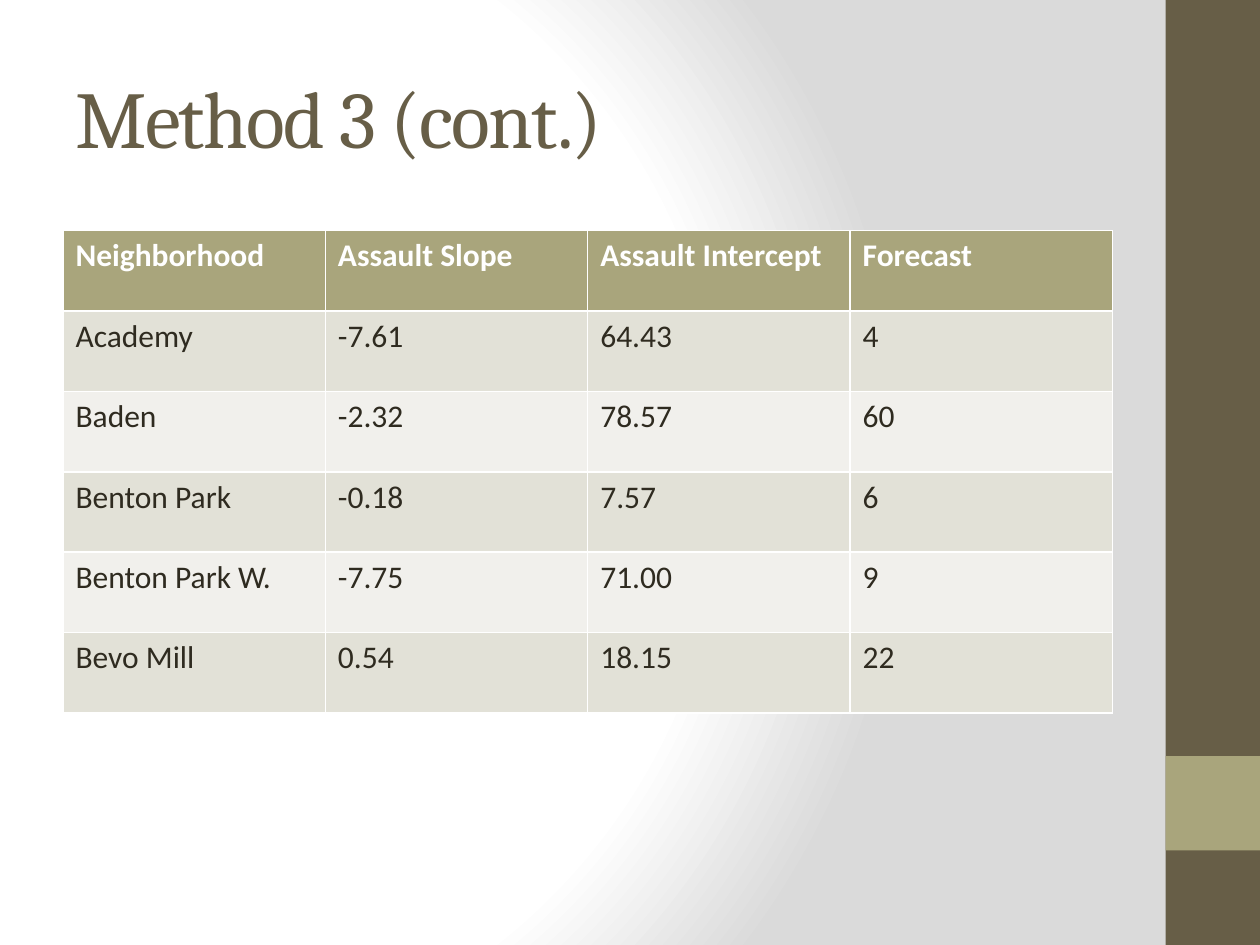
from pptx import Presentation
from pptx.dml.color import RGBColor
from pptx.enum.shapes import MSO_SHAPE
from pptx.enum.text import MSO_ANCHOR, MSO_AUTO_SIZE, PP_ALIGN
from pptx.oxml import parse_xml
from pptx.util import Inches, Pt

RECT = MSO_SHAPE.RECTANGLE
MIDDLE = MSO_ANCHOR.MIDDLE
LEFT = PP_ALIGN.LEFT
NO_FIT = MSO_AUTO_SIZE.NONE
TITLE_ONLY = 5
NS_A = "http://schemas.openxmlformats.org/drawingml/2006/main"

COLORS = {
    "white": "FFFFFF",
    "gray": "DADADA",
    "brown": "675E47",
    "olive": "A9A57C",
    "band_dark": "E2E1D7",
    "band_light": "F1F0EC",
    "text": "2F2B20",
}
FORMATS = {
    "title": {"name": "Cambria", "size": Pt(46), "bold": False},
    "header": {"name": "Calibri", "size": Pt(18), "bold": True},
    "body": {"name": "Calibri", "size": Pt(18), "bold": False},
}
ROWS = [
    ("Neighborhood", "Assault Slope", "Assault Intercept", "Forecast"),
    ("Academy", "-7.61", "64.43", "4"),
    ("Baden", "-2.32", "78.57", "60"),
    ("Benton Park", "-0.18", "7.57", "6"),
    ("Benton Park W.", "-7.75", "71.00", "9"),
    ("Bevo Mill", "0.54", "18.15", "22"),
]


def rgb(color):
    return RGBColor.from_string(COLORS[color])


class SlideBuilder:
    def __init__(self, slide):
        self.s = slide

    def background(self, stops, focus):
        """Circular gradient; focus holds the l, t, r, b percentages."""
        self.s.background.fill.solid()
        bg_pr = self.s.element.cSld.bg.bgPr
        gs = "".join(
            f'<a:gs pos="{pos * 1000}"><a:srgbClr val="{COLORS[color]}"/></a:gs>'
            for pos, color in stops)
        rect = " ".join(f'{side}="{pct * 1000}"' for side, pct in zip("ltrb", focus))
        bg_pr.remove(bg_pr[0])
        bg_pr.insert(0, parse_xml(
            f'<a:gradFill xmlns:a="{NS_A}" rotWithShape="1"><a:gsLst>{gs}</a:gsLst>'
            f'<a:path path="circle"><a:fillToRect {rect}/></a:path></a:gradFill>'))

    def rect(self, x, y, w, h, color):
        sp = self.s.shapes.add_shape(RECT, Inches(x), Inches(y), Inches(w), Inches(h))
        sp.shadow.inherit = False
        sp.fill.solid()
        sp.fill.fore_color.rgb = rgb(color)
        sp.line.fill.background()

    def text(self, tf, text, style, color):
        p = tf.paragraphs[0]
        p.alignment = LEFT
        r = p.add_run()
        r.text = text
        for name, value in FORMATS[style].items():
            setattr(r.font, name, value)
        r.font.color.rgb = rgb(color)
        return r

    def title(self, x, y, w, h, text):
        sp = self.s.shapes.title
        sp.left, sp.top, sp.width, sp.height = map(Inches, (x, y, w, h))
        tf = sp.text_frame
        tf.auto_size = NO_FIT
        tf.vertical_anchor = MIDDLE
        r = self.text(tf, text, "title", "brown")
        r.font._element.set("spc", "-100")

    def table(self, x, y, w, h, rows):
        table = self.s.shapes.add_table(
            len(rows), len(rows[0]), Inches(x), Inches(y), Inches(w), Inches(h)).table
        for i, row in enumerate(rows):
            if i == 0:
                style, color, fill = "header", "white", "olive"
            else:
                style, color = "body", "text"
                fill = "band_dark" if i % 2 else "band_light"
            for j, text in enumerate(row):
                cell = table.cell(i, j)
                cell.fill.solid()
                cell.fill.fore_color.rgb = rgb(fill)
                self.text(cell.text_frame, text, style, color)


def main():
    prs = Presentation()
    prs.slide_width, prs.slide_height = Inches(10), Inches(7.5)
    slide = SlideBuilder(prs.slides.add_slide(prs.slide_layouts[TITLE_ONLY]))

    # Background and side band
    slide.background([(0, "white"), (75, "white"), (100, "gray")], (20, 50, 100, 50))
    slide.rect(9.25, 0, 0.75, 7.5, "brown")
    slide.rect(9.25, 6, 0.75, 0.75, "olive")

    # Title and forecast table
    slide.title(0.5, 0.3, 8.33, 1.25, "Method 3 (cont.)")
    slide.table(0.5, 1.83, 8.33, 3.83, ROWS)

    prs.save("out.pptx")


if __name__ == "__main__":
    main()
